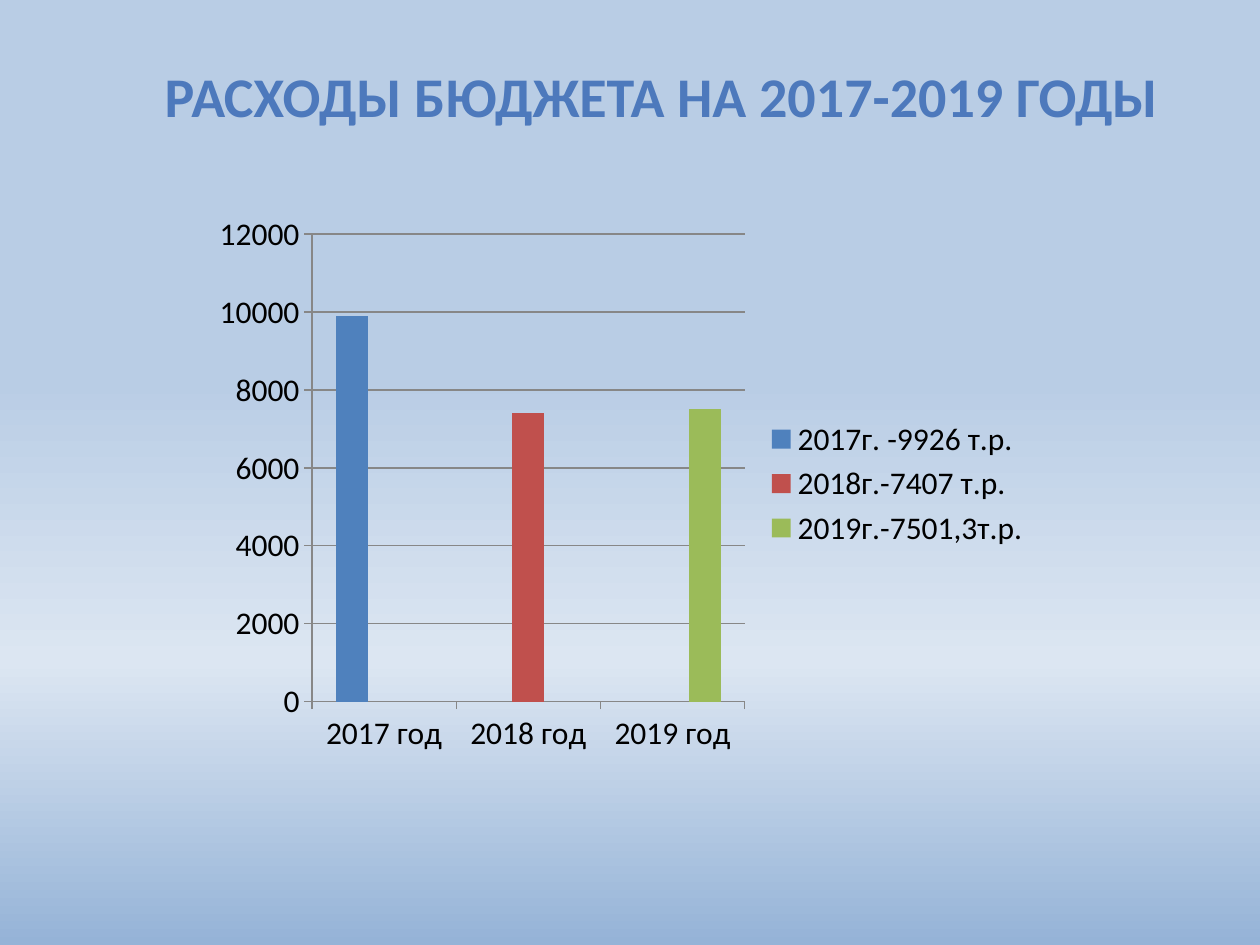
from lxml import etree
from pptx import Presentation
from pptx.chart.data import CategoryChartData
from pptx.dml.color import RGBColor
from pptx.enum.chart import XL_CHART_TYPE, XL_LEGEND_POSITION, XL_TICK_MARK
from pptx.enum.text import MSO_ANCHOR, MSO_AUTO_SIZE, PP_ALIGN
from pptx.oxml.ns import qn
from pptx.util import Cm, Pt

COLUMNS = XL_CHART_TYPE.COLUMN_CLUSTERED
LEGEND_RIGHT = XL_LEGEND_POSITION.RIGHT
TICK_OUTSIDE = XL_TICK_MARK.OUTSIDE
TICK_NONE = XL_TICK_MARK.NONE
ANCHOR_TOP = MSO_ANCHOR.TOP
FIT_SHAPE = MSO_AUTO_SIZE.SHAPE_TO_FIT_TEXT
CENTER = PP_ALIGN.CENTER

FONT = "Calibri"
BLACK = RGBColor(0x00, 0x00, 0x00)
GRAY = RGBColor(0x87, 0x87, 0x87)
BLUE = RGBColor(0x4F, 0x81, 0xBD)
RED = RGBColor(0xC0, 0x50, 0x4D)
GREEN = RGBColor(0x9B, 0xBB, 0x59)

SKY = [
    (0, RGBColor(0xB9, 0xCD, 0xE5)),
    (40, RGBColor(0xB9, 0xCD, 0xE5)),
    (70, RGBColor(0xDC, 0xE6, 0xF2)),
    (100, RGBColor(0x95, 0xB3, 0xD7)),
]
HEADING_BLUES = [
    (0, RGBColor(0x74, 0x94, 0xC9)),
    (49, RGBColor(0x4D, 0x79, 0xBC)),
    (50, RGBColor(0x34, 0x6A, 0xAA)),
    (92, RGBColor(0x32, 0x5F, 0x94)),
    (100, RGBColor(0x31, 0x5D, 0x91)),
]

EXPENSES = [
    ("2017 год", "2017г. -9926 т.р.", 9900, BLUE),
    ("2018 год", "2018г.-7407 т.р.", 7400, RED),
    ("2019 год", "2019г.-7501,3т.р.", 7500, GREEN),
]


def fill_downwards(fill, owner, stops):
    fill.gradient()
    fill.gradient_angle = 270
    stop_list = owner.find(".//" + qn("a:gsLst"))
    for default_stop in list(stop_list):
        stop_list.remove(default_stop)
    for percent, color in stops:
        stop = etree.SubElement(stop_list, qn("a:gs"), pos=str(percent * 1000))
        etree.SubElement(stop, qn("a:srgbClr"), val=str(color))


def place_heading(slide, left, top, width, height):
    heading = slide.shapes.title
    heading.left, heading.top = left, top
    heading.width, heading.height = width, height
    frame = heading.text_frame
    frame.word_wrap = False
    frame.auto_size = FIT_SHAPE
    frame.vertical_anchor = ANCHOR_TOP
    paragraph = frame.paragraphs[0]
    paragraph.alignment = CENTER
    run = paragraph.add_run()
    run.text = "РАСХОДЫ БЮДЖЕТА НА 2017-2019 ГОДЫ"
    run.font.name = FONT
    run.font.size = Pt(32)
    run.font.bold = True
    fill_downwards(run.font.fill, heading.element, HEADING_BLUES)


def place_expenses(slide, left, top, width, height):
    data = CategoryChartData()
    data.categories = [year for year, _, _, _ in EXPENSES]
    for position, (_, label, amount, _) in enumerate(EXPENSES):
        values = [None] * len(EXPENSES)
        values[position] = amount
        data.add_series(label, values)
    chart = slide.shapes.add_chart(COLUMNS, left, top, width, height, data).chart

    chart.has_title = False
    chart.font.name = FONT
    chart.font.size = Pt(18)
    chart.font.color.rgb = BLACK
    chart.has_legend = True
    chart.legend.position = LEGEND_RIGHT
    chart.legend.include_in_layout = False

    columns = chart.plots[0]
    columns.gap_width = 150
    columns.vary_by_categories = False
    for series, (_, _, _, color) in zip(columns.series, EXPENSES):
        series.format.fill.solid()
        series.format.fill.fore_color.rgb = color

    chart.value_axis.has_major_gridlines = True
    gridlines = chart.value_axis.major_gridlines
    for axis in (chart.category_axis, chart.value_axis):
        axis.major_tick_mark = TICK_OUTSIDE
        axis.minor_tick_mark = TICK_NONE
    for part in (chart.category_axis, chart.value_axis, gridlines):
        part.format.line.color.rgb = GRAY
        part.format.line.width = Pt(0.75)


def main():
    deck = Presentation()
    deck.slide_width, deck.slide_height = Cm(25.4), Cm(19.05)
    slide = deck.slides.add_slide(deck.slide_layouts[5])
    fill_downwards(slide.background.fill, slide.element, SKY)
    place_heading(slide, Cm(2.97), Cm(1.12), Cm(20.73), Cm(1.63))
    place_expenses(slide, Cm(4.09), Cm(4.11), Cm(16.94), Cm(11.28))
    deck.save("out.pptx")


if __name__ == "__main__":
    main()
